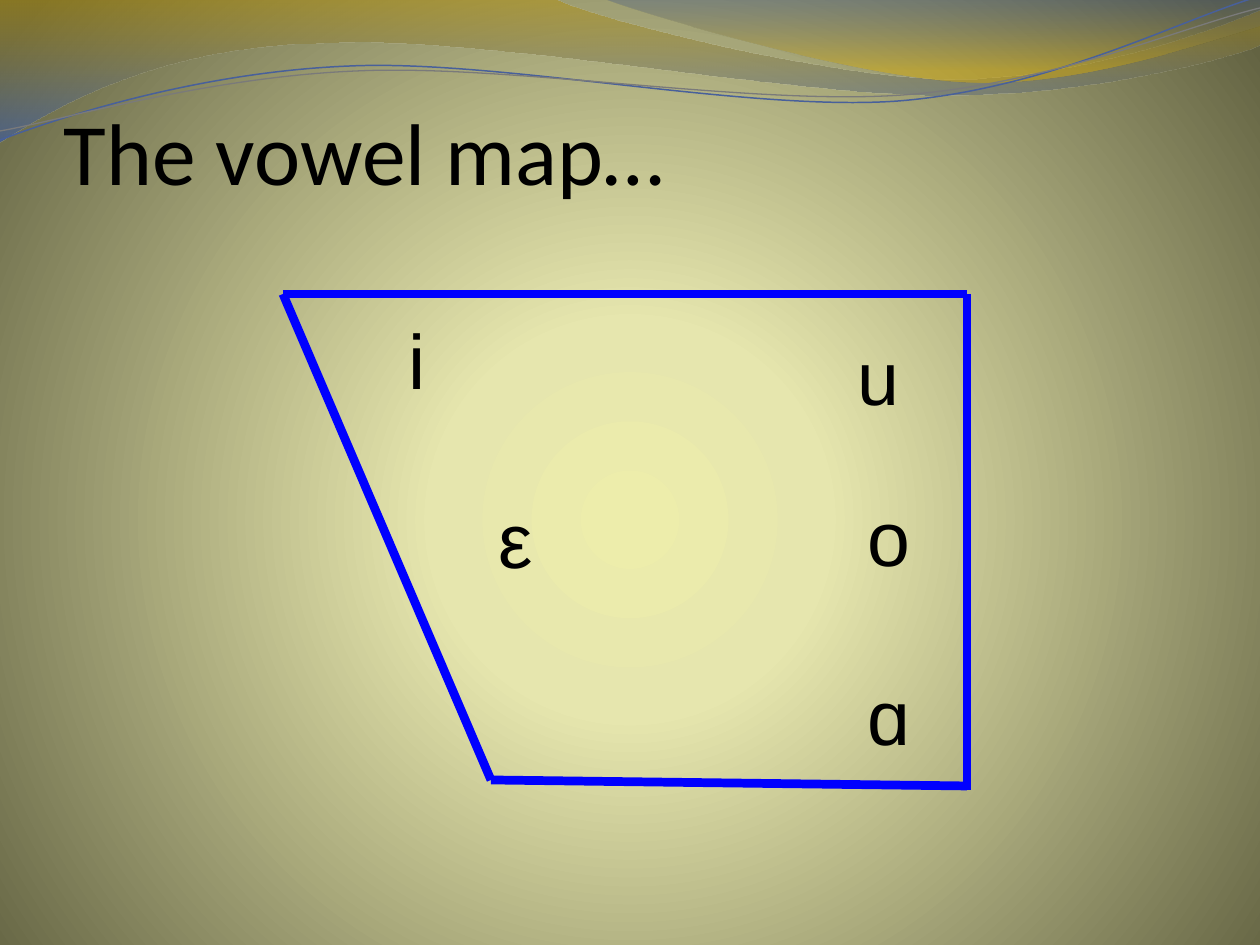
"""Build the vowel map slide: a blue vowel quadrilateral under a wavy header."""
from lxml.etree import SubElement
from pptx import Presentation
from pptx.dml.color import RGBColor
from pptx.enum.shapes import MSO_CONNECTOR as CONNECTOR
from pptx.enum.text import MSO_ANCHOR as ANCHOR, PP_ALIGN as ALIGN
from pptx.oxml.ns import qn
from pptx.util import Pt

PX = 914400 / 126


def color(value):
    return RGBColor.from_string(value)


def set_gradient(element, stops, direction, **settings):
    gradient = element.xpath(".//a:gradFill")[0]
    for child in list(gradient):
        gradient.remove(child)
    stop_list = SubElement(gradient, qn("a:gsLst"))
    for position, value, alpha in stops:
        stop = SubElement(stop_list, qn("a:gs"), pos=str(position * 1000))
        fill = SubElement(stop, qn("a:srgbClr"), val=value)
        SubElement(fill, qn("a:alpha"), val=str(alpha * 1000))
    return SubElement(gradient, qn(direction), **settings)


presentation = Presentation()
presentation.slide_width = round(1260 * PX)
presentation.slide_height = round(945 * PX)
slide = presentation.slides.add_slide(presentation.slide_layouts[6])

slide.background.fill.gradient()
backdrop = [(0, "EDEDAB", 100), (25, "E6E6AE", 100), (100, "636342", 100)]
circle = set_gradient(slide.element, backdrop, "a:path", path="circle")
SubElement(circle, qn("a:fillToRect"), l="10000", t="110000", r="10000", b="100000")

waves = [
    ((0, 0), [
        [(554, -1)],
        [(600, 21), (837, 79), (955, 79)],
        [(1075, 79), (1207, 33), (1260, 11)],
        [(1261, 45)],
        [(1239, 55), (1096, 96), (940, 95)],
        [(784, 95), (481, 35), (324, 43)],
        [(163, 45), (58, 105), (-1, 142)],
    ], [(0, "B69000", 45), (100, "3359B7", 55)], None),
    ((604, -1), [
        [(641, 14), (859, 78), (969, 82)],
        [(1079, 87), (1211, 40), (1260, 26)],
        [(1260, 0)],
    ], [(0, "324C8D", 30), (80, "D9AC00", 45)], None),
    ((0, 140), [
        [(60, 117), (199, 72), (349, 66)],
        [(498, 59), (747, 112), (898, 101)],
        [(1050, 89), (1182, 19), (1257, -3)],
    ], None, ("48609B", 0.85)),
    ((0, 131), [
        [(59, 121), (207, 77), (357, 71)],
        [(508, 64), (752, 106), (903, 95)],
        [(1053, 84), (1185, 26), (1260, 8)],
    ], None, ("7A7A7A", 0.75)),
]
for start, segments, stops, stroke in waves:
    builder = slide.shapes.build_freeform(*start, scale=PX)
    points = [point for segment in segments for point in segment]
    builder.add_line_segments(points, close=stops is not None)
    shape = builder.convert_to_shape()
    shape.shadow.inherit = False
    steps = iter(shape.element.xpath(".//a:lnTo"))
    for segment in segments:
        step = next(steps)
        if len(segment) == 3:
            step.tag = qn("a:cubicBezTo")
            for control in (next(steps), next(steps)):
                step.append(control[0])
                control.getparent().remove(control)
    if stops:
        shape.fill.gradient()
        set_gradient(shape.element, stops, "a:lin", ang="5400000", scaled="1")
        shape.line.fill.background()
    else:
        shape.fill.background()
        shape.line.color.rgb = color(stroke[0])
        shape.line.width = Pt(stroke[1])

title = slide.shapes.add_textbox(*(round(n * PX) for n in (64, 45, 1134, 158)))
frame = title.text_frame
frame.word_wrap = True
frame.vertical_anchor = ANCHOR.BOTTOM
frame.margin_left = frame.margin_right = frame.margin_bottom = 0
paragraph = frame.paragraphs[0]
paragraph.text = "The vowel map…"
paragraph.font.name = "Calibri"
paragraph.font.size = Pt(50)
paragraph.font.color.rgb = color("000000")

sides = [
    (283, 294, 491, 780),
    (283, 294, 967, 294),
    (491, 780, 967, 786),
    (967, 294, 967, 790),
]
for side in sides:
    ends = (round(n * PX) for n in side)
    connector = slide.shapes.add_connector(CONNECTOR.STRAIGHT, *ends)
    connector.line.color.rgb = color("0000FF")
    connector.line.width = Pt(5)
    SubElement(connector.element.spPr, qn("a:effectLst"))

vowels = [
    ("ɑ", 819, 662, 139, 110, 44),
    ("i", 343, 306, 149, 116, 44),
    ("u", 819, 324, 118, 118, 43),
    ("ε", 450, 485, 131, 107, 44),
    ("o", 819, 483, 139, 118, 44),
]
for vowel, *box, size in vowels:
    label = slide.shapes.add_textbox(*(round(n * PX) for n in box))
    label.text_frame.word_wrap = True
    paragraph = label.text_frame.paragraphs[0]
    paragraph.text = vowel
    paragraph.alignment = ALIGN.CENTER
    paragraph.space_before = Pt(4)
    paragraph.font.name = "Arial"
    paragraph.font.size = Pt(size)
    paragraph.font.color.rgb = color("000000")

presentation.save("out.pptx")
